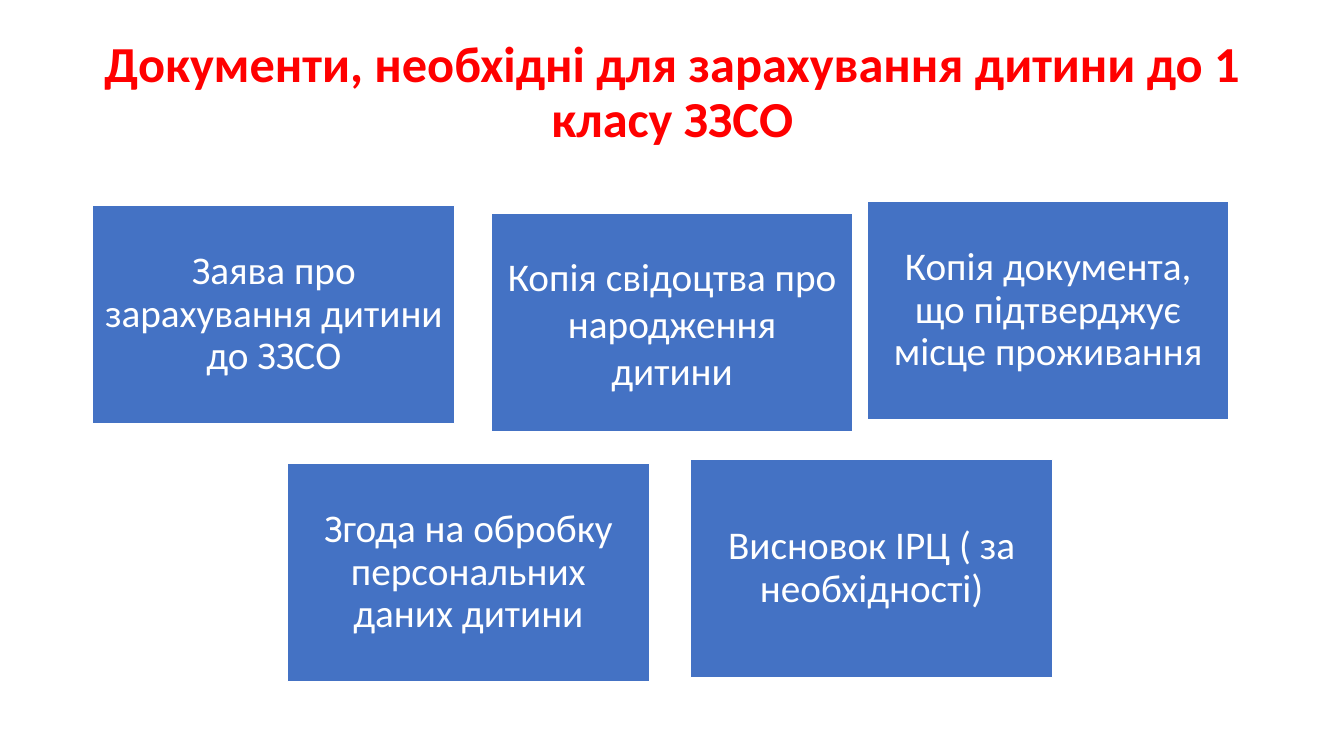
from dataclasses import dataclass

from pptx import Presentation
from pptx.dml.color import RGBColor
from pptx.enum.shapes import MSO_SHAPE as Shape
from pptx.enum.text import MSO_ANCHOR as Anchor, PP_ALIGN as Align
from pptx.slide import Slide
from pptx.text.text import TextFrame
from pptx.util import Inches, Pt

RED = RGBColor(0xFF, 0x00, 0x00)
BLUE = RGBColor(0x44, 0x72, 0xC4)
WHITE = RGBColor(0xFF, 0xFF, 0xFF)

CARD_WIDTH, CARD_HEIGHT = Inches(3.59), Inches(2.16)
CARD_MARGIN = Inches(0.12)
TITLE = "Документи, необхідні для зарахування дитини до 1 класу ЗЗСО"
TITLE_FONT = {"name": "Calibri", "size": Pt(36), "bold": True}
CARD_FONT = {"name": "Calibri", "size": Pt(28), "bold": False}
FRAME_FORMAT = {"word_wrap": True, "vertical_anchor": Anchor.MIDDLE}
CARD_FRAME = FRAME_FORMAT | {
    f"margin_{side}": CARD_MARGIN for side in ("left", "top", "right", "bottom")
}


@dataclass(frozen=True)
class DocumentCard:
    left: float
    top: float
    text: str
    line_spacing: float = 0.9


CARDS = (
    DocumentCard(0.92, 2.04, "Заява про зарахування дитини до ЗЗСО"),
    DocumentCard(4.87, 2.12, "Копія свідоцтва про народження дитини", 1.0),
    DocumentCard(8.6, 2.0, "Копія документа, що підтверджує місце проживання"),
    DocumentCard(2.85, 4.6, "Згода на обробку персональних даних дитини"),
    DocumentCard(6.85, 4.56, "Висновок ІРЦ ( за необхідності)"),
)


def apply_format(target: object, values: dict) -> None:
    for name, value in values.items():
        setattr(target, name, value)


def write_text(frame: TextFrame, text: str, frame_format: dict, font_format: dict,
               color: RGBColor, line_spacing: float) -> None:
    apply_format(frame, frame_format)
    para = frame.paragraphs[0]
    apply_format(para, {"alignment": Align.CENTER, "line_spacing": line_spacing})
    span = para.add_run()
    span.text = text
    apply_format(span.font, font_format)
    span.font.color.rgb = color


def add_title(page: Slide) -> None:
    box = page.shapes.add_textbox(Inches(0.92), Inches(0.4), Inches(11.5), Inches(1.06))
    write_text(box.text_frame, TITLE, FRAME_FORMAT, TITLE_FONT, RED, 0.9)


def add_card(page: Slide, card: DocumentCard) -> None:
    box = page.shapes.add_shape(
        Shape.RECTANGLE, Inches(card.left), Inches(card.top), CARD_WIDTH, CARD_HEIGHT
    )
    box.shadow.inherit = False
    box.fill.solid()
    box.fill.fore_color.rgb = BLUE
    box.line.color.rgb = WHITE
    box.line.width = Pt(1)
    write_text(box.text_frame, card.text, CARD_FRAME, CARD_FONT, WHITE, card.line_spacing)


def main() -> None:
    deck = Presentation()
    apply_format(deck, {"slide_width": Inches(13.33), "slide_height": Inches(7.5)})
    page = deck.slides.add_slide(deck.slide_layouts[6])
    add_title(page)
    for card in CARDS:
        add_card(page, card)
    deck.save("out.pptx")


if __name__ == "__main__":
    main()
